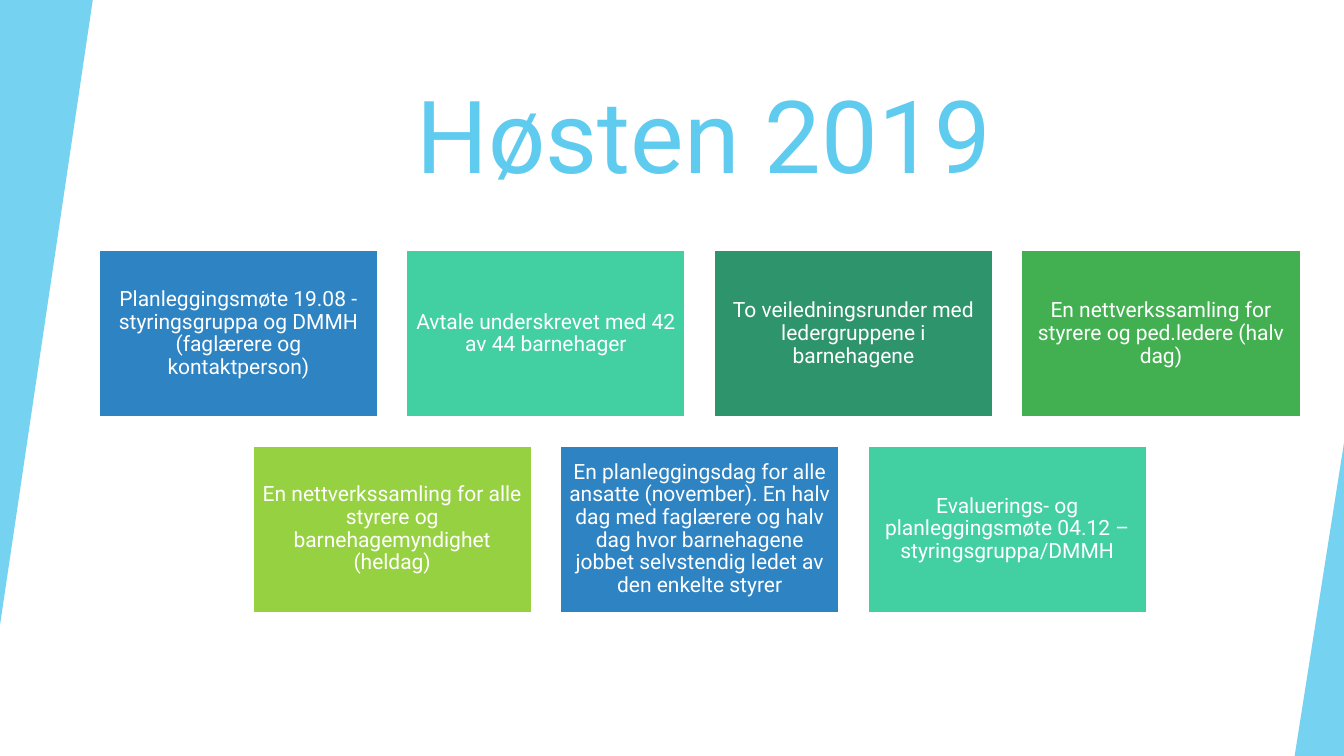
from lxml.etree import SubElement
from pptx import Presentation
from pptx.dml.color import RGBColor
from pptx.enum.shapes import MSO_SHAPE
from pptx.enum.text import MSO_ANCHOR, MSO_AUTO_SIZE, PP_ALIGN
from pptx.oxml.ns import qn
from pptx.util import Inches, Pt

STEPS = [
    [("Planleggingsmøte 19.08 - styringsgruppa og DMMH (faglærere og kontaktperson)", "2E83C3"),
     ("Avtale underskrevet med 42 av 44 barnehager", "42D0A2"),
     ("To veiledningsrunder med ledergruppene i barnehagene", "2E946B"),
     ("En nettverkssamling for styrere og ped.ledere (halv dag)", "42B051")],
    [("En nettverkssamling for alle styrere og barnehagemyndighet (heldag)", "96D141"),
     ("En planleggingsdag for alle ansatte (november). En halv dag med faglærere "
      "og halv dag hvor barnehagene jobbet selvstendig ledet av den enkelte styrer", "2E83C3"),
     ("Evaluerings- og planleggingsmøte 04.12 – styringsgruppa/DMMH", "42D0A2")],
]
WIDE, HIGH, GAP = 2.77, 1.66, 0.28
TOP, MID = 2.48, 6.94


def color(code):
    return RGBColor.from_string(code)


def write(frame, text, size=15, ink="FFFFFF", font="Roboto", anchor=MSO_ANCHOR.MIDDLE,
          inset=0.06, side=0.06, space=0.9):
    frame.word_wrap = True
    frame.auto_size = MSO_AUTO_SIZE.NONE
    frame.vertical_anchor = anchor
    frame.margin_top = frame.margin_bottom = Inches(inset)
    frame.margin_left = frame.margin_right = Inches(side)
    frame.text = text
    para = frame.paragraphs[0]
    para.alignment = PP_ALIGN.CENTER
    para.line_spacing = space
    para.space_before = Pt(0)
    para.font.size = Pt(size)
    para.font.name = font
    para.font.color.rgb = color(ink)


class Canvas:
    blue = "5FCBEF"
    white = "FFFFFF"

    def __init__(self, deck):
        self.slide = deck.slides.add_slide(deck.slide_layouts[5])

    def title(self, text, left, top, width, height):
        head = self.slide.shapes.title
        head.left, head.top = Inches(left), Inches(top)
        head.width, head.height = Inches(width), Inches(height)
        write(head.text_frame, text, size=72, ink=self.blue, anchor=MSO_ANCHOR.TOP,
              inset=0.05, side=0.1, space=1.0)

    def shape(self, kind, left, top, width, height, fill):
        item = self.slide.shapes.add_shape(
            kind, Inches(left), Inches(top), Inches(width), Inches(height))
        item.shadow.inherit = False
        item.fill.solid()
        item.fill.fore_color.rgb = color(fill)
        return item

    def wedge(self, left, top, width, height, turn=0, alpha=85):
        item = self.shape(MSO_SHAPE.ISOSCELES_TRIANGLE, left, top, width, height, self.blue)
        item.adjustments[0] = 1
        item.rotation = turn
        item.line.fill.background()
        tone = item.fill._xPr.find(qn("a:solidFill"))[0]
        SubElement(tone, qn("a:alpha"), val=str(alpha * 1000))

    def card(self, text, fill, left, top):
        item = self.shape(MSO_SHAPE.RECTANGLE, left, top, WIDE, HIGH, fill)
        item.line.color.rgb = color(self.white)
        item.line.width = Pt(1.5)
        write(item.text_frame, text)


def main():
    deck = Presentation()
    deck.slide_width, deck.slide_height = Inches(13.33), Inches(7.5)
    page = Canvas(deck)

    # Title
    page.title("Høsten 2019", 1.41, 0.67, 11.15, 0.93)

    # Side wedges
    page.wedge(0, 0, 0.92, 6.2, turn=180)
    page.wedge(12.84, 4.39, 0.49, 3.11)

    # Rows of cards, each centred on the same axis
    for row, cards in enumerate(STEPS):
        start = MID - (len(cards) * (WIDE + GAP) - GAP) / 2
        for col, (text, fill) in enumerate(cards):
            page.card(text, fill, start + col * (WIDE + GAP), TOP + row * (HIGH + GAP))

    deck.save("out.pptx")


if __name__ == "__main__":
    main()
